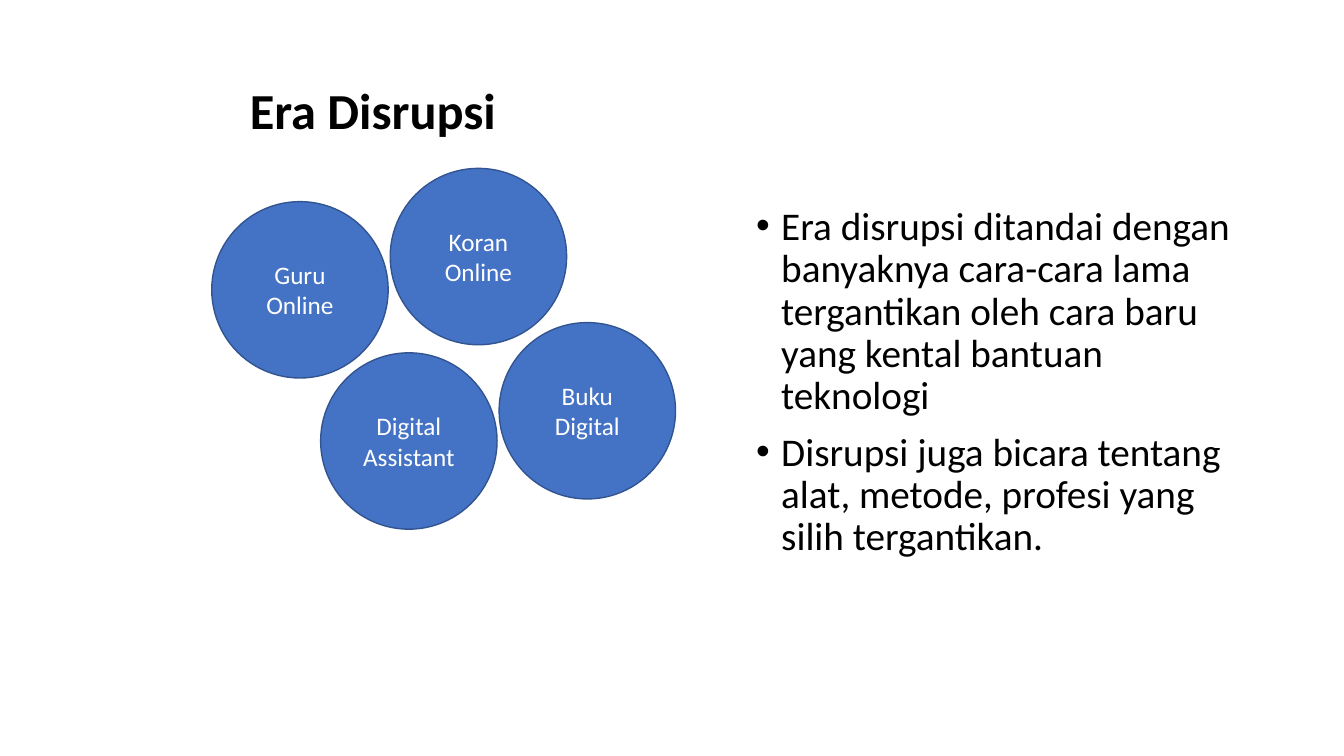
"""Build the "Era Disrupsi" slide with four circles and two bullet points."""
from lxml import etree
from pptx import Presentation
from pptx.dml.color import RGBColor
from pptx.enum.shapes import MSO_SHAPE
from pptx.enum.text import MSO_ANCHOR, PP_ALIGN
from pptx.oxml.ns import qn
from pptx.util import Inches, Pt

TITLE = "Era Disrupsi"
BULLETS = [
    "Era disrupsi ditandai dengan banyaknya cara-cara lama tergantikan "
    "oleh cara baru yang kental bantuan teknologi",
    "Disrupsi juga bicara tentang alat, metode, profesi yang silih tergantikan.",
]
CIRCLES = [
    ("Guru Online", 2.1, 2),
    ("Koran Online", 3.87, 1.67),
    ("Buku Digital", 4.95, 3.2),
    ("Digital Assistant", 3.18, 3.5),
]
DIAMETER = 1.75
FONT = "Calibri"
BLACK = RGBColor(0x00, 0x00, 0x00)
WHITE = RGBColor(0xFF, 0xFF, 0xFF)
BLUE = RGBColor(0x44, 0x72, 0xC4)
DARK_BLUE = RGBColor(0x32, 0x54, 0x91)
OVAL = MSO_SHAPE.OVAL
TOP, MIDDLE = MSO_ANCHOR.TOP, MSO_ANCHOR.MIDDLE
LEFT, CENTER = PP_ALIGN.LEFT, PP_ALIGN.CENTER


def add_bullet(paragraph):
    properties = paragraph._p.get_or_add_pPr()
    properties.set("marL", str(Inches(0.25)))
    properties.set("indent", str(Inches(-0.25)))
    etree.SubElement(properties, qn("a:buFont")).set("typeface", "Arial")
    etree.SubElement(properties, qn("a:buChar")).set("char", "•")


def write_text(shape, lines, size, color=BLACK, bold=False, align=LEFT,
               anchor=MIDDLE, spacing=1.0, gap=0, bullet=False):
    frame = shape.text_frame
    frame.word_wrap = True
    frame.vertical_anchor = anchor
    for index, line in enumerate(lines):
        paragraph = frame.add_paragraph() if index else frame.paragraphs[0]
        if bullet:
            add_bullet(paragraph)
        paragraph.alignment = align
        paragraph.line_spacing = spacing
        paragraph.space_before = Pt(gap if index else 0)
        run = paragraph.add_run()
        run.text = line
        run.font.name = FONT
        run.font.size = Pt(size)
        run.font.bold = bold
        run.font.color.rgb = color


def add_circle(slide, label, left, top):
    circle = slide.shapes.add_shape(
        OVAL, Inches(left), Inches(top), Inches(DIAMETER), Inches(DIAMETER))
    circle.shadow.inherit = False
    circle.fill.solid()
    circle.fill.fore_color.rgb = BLUE
    circle.line.color.rgb = DARK_BLUE
    circle.line.width = Pt(1)
    write_text(circle, [label], 18, color=WHITE, align=CENTER)


def main():
    presentation = Presentation()
    presentation.slide_width = Inches(13.33)
    presentation.slide_height = Inches(7.5)
    slide = presentation.slides.add_slide(presentation.slide_layouts[6])

    title = slide.shapes.add_textbox(
        Inches(2.38), Inches(0.4), Inches(10.04), Inches(1.45))
    write_text(title, [TITLE], 36, bold=True, spacing=0.9)

    body = slide.shapes.add_textbox(
        Inches(7.4), Inches(2), Inches(5.02), Inches(4.76))
    write_text(body, BULLETS, 28, anchor=TOP, spacing=0.9, gap=10, bullet=True)

    for label, left, top in CIRCLES:
        add_circle(slide, label, left, top)

    presentation.save("out.pptx")


if __name__ == "__main__":
    main()
